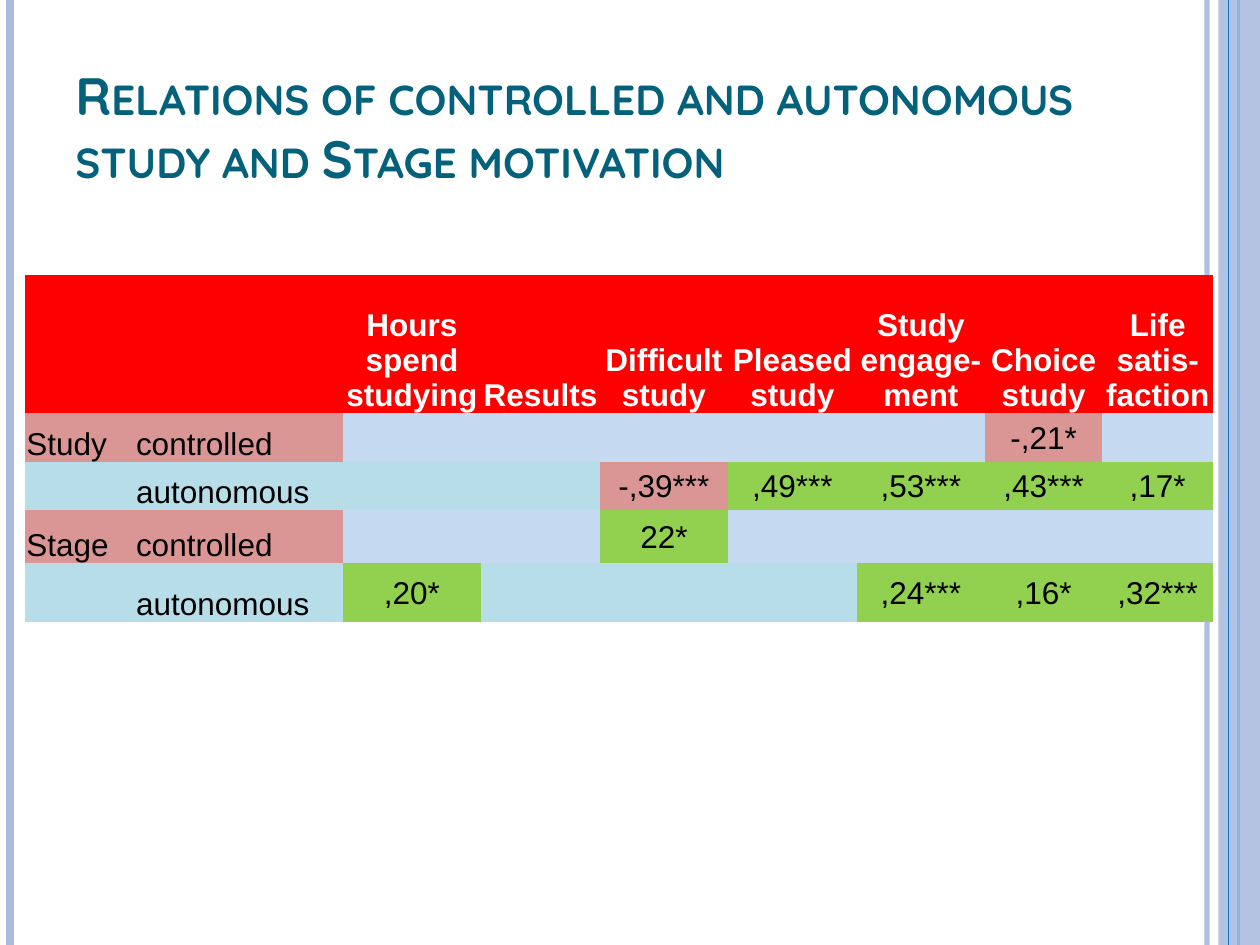
from lxml.etree import SubElement
from pptx import Presentation
from pptx.dml.color import RGBColor
from pptx.enum.shapes import MSO_CONNECTOR, MSO_SHAPE
from pptx.enum.text import MSO_ANCHOR, PP_ALIGN
from pptx.oxml.ns import qn
from pptx.util import Inches, Pt

WIDTH, HEIGHT = 10, 7.5
TITLE = "Relations of controlled and autonomous study and Stage motivation"
HEADINGS = ["", "", "Hours spend studying", "Results", "Difficult study", "Pleased study",
            "Study engage-ment", "Choice study", "Life satis- faction"]
ROWS = [
    ["Study", "controlled", "", "", "", "", "", "-,21*", ""],
    ["", "autonomous", "", "", "-,39***", ",49***", ",53***", ",43***", ",17*"],
    ["Stage", "controlled", "", "", "22*", "", "", "", ""],
    ["", "autonomous", ",20*", "", "", "", ",24***", ",16*", ",32***"],
]
COLUMN_WIDTHS = [0.87, 1.65, 1.1, 0.94, 1.02, 1.02, 1.02, 0.93, 0.88]
ROW_HEIGHTS = [1.1, 0.39, 0.38, 0.42, 0.47]
LABEL_COLUMNS = 2
RED, ROSE, GREEN, BLUE, AQUA = "FF0000", "DA9694", "92D050", "C5D9F1", "B7DEE8"
LAVENDER, ACCENT = "ABBBDF", "0F6FC6"
NO_STYLE = "{2D5ABB26-0587-4C30-8999-92F81FD0307C}"


def color(value):
    return RGBColor.from_string(value)


def set_alpha(shape, percent):
    for fill in shape._element.spPr.iter(qn("a:srgbClr")):
        SubElement(fill, qn("a:alpha")).set("val", str(percent * 1000))


def add_stripe(page, x, hue, weight, alpha=100):
    stripe = page.shapes.add_connector(
        MSO_CONNECTOR.STRAIGHT, Inches(x), 0, Inches(x), Inches(HEIGHT))
    stripe.line.color.rgb = color(hue)
    stripe.line.width = Pt(weight)
    if alpha < 100:
        set_alpha(stripe, alpha)
    SubElement(stripe._element.spPr, qn("a:effectLst"))


def cell_fill(row, column, text):
    if row == 0:
        return RED
    controlled = row % 2 == 1
    if column < LABEL_COLUMNS:
        return ROSE if controlled else AQUA
    if text:
        return ROSE if text.startswith("-") else GREEN
    return BLUE if controlled else AQUA


def fill_cell(cell, row, column, text):
    header, label = row == 0, column < LABEL_COLUMNS
    cell.fill.solid()
    cell.fill.fore_color.rgb = color(cell_fill(row, column, text))
    cell.margin_left = cell.margin_right = cell.margin_top = Inches(0.01)
    cell.margin_bottom = 0
    cell.vertical_anchor = MSO_ANCHOR.BOTTOM if header or label else MSO_ANCHOR.MIDDLE
    cell.text = text
    para = cell.text_frame.paragraphs[0]
    para.alignment = PP_ALIGN.LEFT if label else PP_ALIGN.CENTER
    para.font.name = "Arial"
    para.font.size = Pt(18)
    para.font.bold = header
    para.font.color.rgb = color("FFFFFF" if header else "000000")


deck = Presentation()
deck.slide_width, deck.slide_height = Inches(WIDTH), Inches(HEIGHT)
page = deck.slides.add_slide(deck.slide_layouts[6])

# Side stripes and the band on the right
add_stripe(page, 9.58, LAVENDER, 3, 93)
add_stripe(page, 0.08, LAVENDER, 4.5)
add_stripe(page, 9.83, ACCENT, 1.5)
band = page.shapes.add_shape(
    MSO_SHAPE.RECTANGLE, Inches(9.67), 0, Inches(WIDTH - 9.67), Inches(HEIGHT))
band.shadow.inherit = False
band.fill.solid()
band.fill.fore_color.rgb = color(LAVENDER)
set_alpha(band, 87)
band.line.fill.background()
add_stripe(page, 9.75, ACCENT, 0.75)

# Title in small capitals
title = page.shapes.add_textbox(Inches(0.5), Inches(0.3), Inches(8.17), Inches(1.25))
title.text_frame.word_wrap = True
title.text_frame.vertical_anchor = MSO_ANCHOR.BOTTOM
span = title.text_frame.paragraphs[0].add_run()
span.text = TITLE
span.font.name = "Quicksand"
span.font.size = Pt(30)
span.font.bold = True
span.font.color.rgb = color("04617B")
span._r.get_or_add_rPr().set("cap", "small")

# Correlation table
grid = [HEADINGS] + ROWS
table = page.shapes.add_table(
    len(grid), len(HEADINGS), Inches(0.2), Inches(2.18),
    Inches(sum(COLUMN_WIDTHS)), Inches(sum(ROW_HEIGHTS))).table
table.first_row = table.horz_banding = False
table._tbl.tblPr.find(qn("a:tableStyleId")).text = NO_STYLE
for column, width in zip(table.columns, COLUMN_WIDTHS):
    column.width = Inches(width)
for row, height in zip(table.rows, ROW_HEIGHTS):
    row.height = Inches(height)
for row, texts in enumerate(grid):
    for column, text in enumerate(texts):
        fill_cell(table.cell(row, column), row, column, text)

deck.save("out.pptx")
